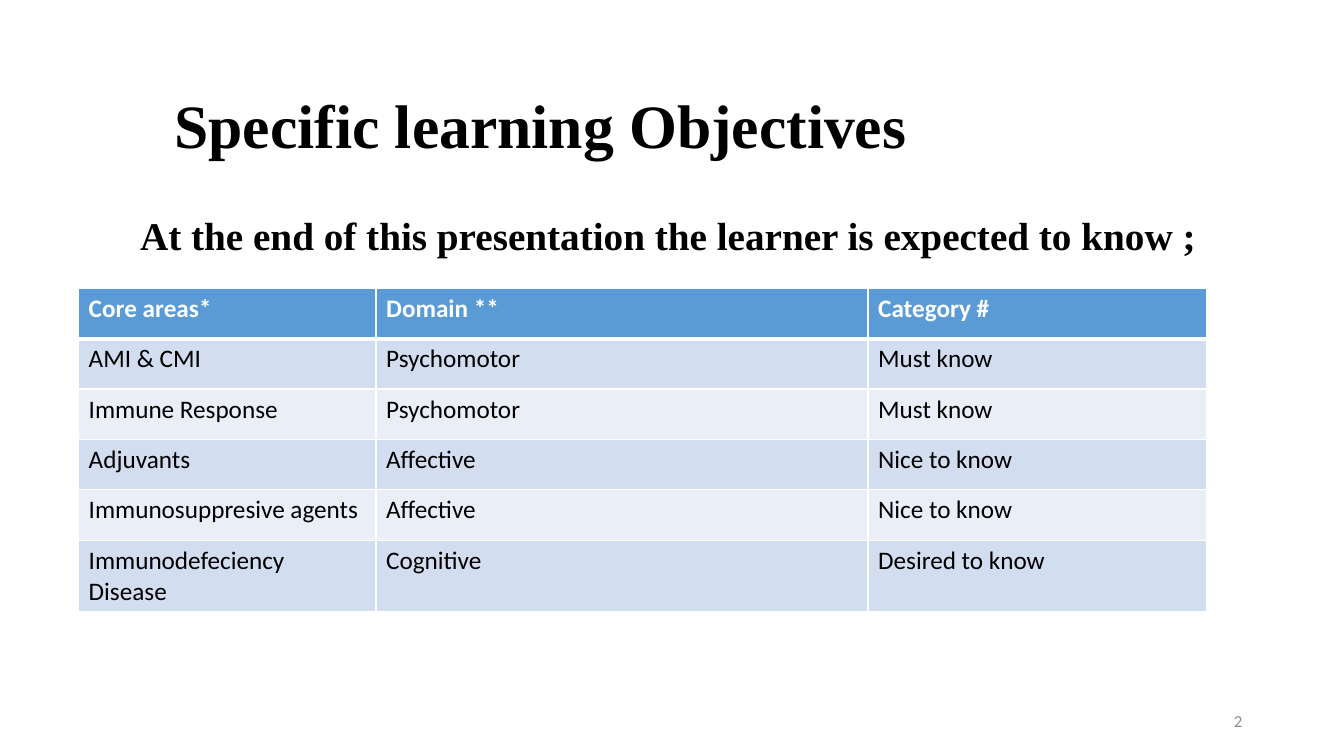
from lxml import etree
from pptx import Presentation
from pptx.dml.color import RGBColor as RGB
from pptx.enum.text import MSO_ANCHOR as ANCHOR, PP_ALIGN as ALIGN
from pptx.oxml.ns import qn
from pptx.util import Inches, Pt

COLORS = {
    "text": "000000",
    "white": "FFFFFF",
    "header": "5B9BD5",
    "odd": "D2DEEF",
    "even": "EAEFF7",
    "number": "8C8C8C",
}
SERIF, SANS = "Times New Roman", "Calibri"
SLIDE_W, SLIDE_H = 13.33, 7.5
COLUMNS = (2.95, 4.88, 3.36)
ROW_H = 0.5
OBJECTIVES = (
    ("Core areas*", "Domain **", "Category #"),
    ("AMI & CMI", "Psychomotor", "Must know"),
    ("Immune Response", "Psychomotor", "Must know"),
    ("Adjuvants", "Affective", "Nice to know"),
    ("Immunosuppresive agents", "Affective", "Nice to know"),
    ("Immunodefeciency Disease", "Cognitive", "Desired to know"),
)


def write(tf, text, size, font=SANS, color="text", bold=False,
          align=ALIGN.LEFT, anchor=ANCHOR.TOP, spacing=1.0):
    tf.word_wrap = True
    tf.vertical_anchor = anchor
    p = tf.paragraphs[0]
    p.alignment = align
    p.line_spacing = spacing
    r = p.add_run()
    r.text = text
    r.font.size = Pt(size)
    r.font.name = font
    r.font.bold = bold
    r.font.color.rgb = RGB.from_string(COLORS[color])


def add_title(slide, text, left, top, width, height):
    sp = slide.shapes.title
    sp.left, sp.top = Inches(left), Inches(top)
    sp.width, sp.height = Inches(width), Inches(height)
    write(sp.text_frame, text, 44, SERIF, bold=True,
          anchor=ANCHOR.MIDDLE, spacing=0.9)


def add_text(slide, text, left, top, width, height, **style):
    sp = slide.shapes.add_textbox(
        Inches(left), Inches(top), Inches(width), Inches(height))
    write(sp.text_frame, text, **style)


def set_borders(cell, **widths):
    """Draw white cell borders; widths in points, keyed L, R, T, B."""
    tc_pr = cell._tc.get_or_add_tcPr()
    for side, width in widths.items():
        ln = etree.SubElement(tc_pr, qn(f"a:ln{side}"), w=str(Pt(width)))
        fill = etree.SubElement(ln, qn("a:solidFill"))
        etree.SubElement(fill, qn("a:srgbClr"), val=COLORS["white"])


def add_objectives_table(slide, left, top):
    table = slide.shapes.add_table(
        len(OBJECTIVES), len(COLUMNS), Inches(left), Inches(top),
        Inches(sum(COLUMNS)), Inches(ROW_H * len(OBJECTIVES))).table
    for column, width in zip(table.columns, COLUMNS):
        column.width = Inches(width)
    for i, labels in enumerate(OBJECTIVES):
        header = i == 0
        band = "header" if header else "odd" if i % 2 else "even"
        table.rows[i].height = Inches(ROW_H)
        for j, label in enumerate(labels):
            cell = table.cell(i, j)
            set_borders(cell, L=1, R=1, T=3 if i == 1 else 1,
                        B=3 if header else 1)
            cell.fill.solid()
            cell.fill.fore_color.rgb = RGB.from_string(COLORS[band])
            write(cell.text_frame, label, 18, bold=header,
                  color="white" if header else "text")


def main():
    prs = Presentation()
    prs.slide_width, prs.slide_height = Inches(SLIDE_W), Inches(SLIDE_H)
    slide = prs.slides.add_slide(prs.slide_layouts[5])
    add_title(slide, "Specific learning Objectives", 1.63, 0.67, 10.13, 1.21)
    add_objectives_table(slide, 0.78, 2.86)
    add_text(slide,
             "At the end of this presentation the learner is expected to know ;",
             1.29, 2.05, 10.71, 0.57, size=28, font=SERIF, bold=True)
    add_text(slide, "2", 9.42, 6.95, 3, 0.4, size=12, color="number",
             align=ALIGN.RIGHT, anchor=ANCHOR.MIDDLE)
    prs.save("out.pptx")


if __name__ == "__main__":
    main()
